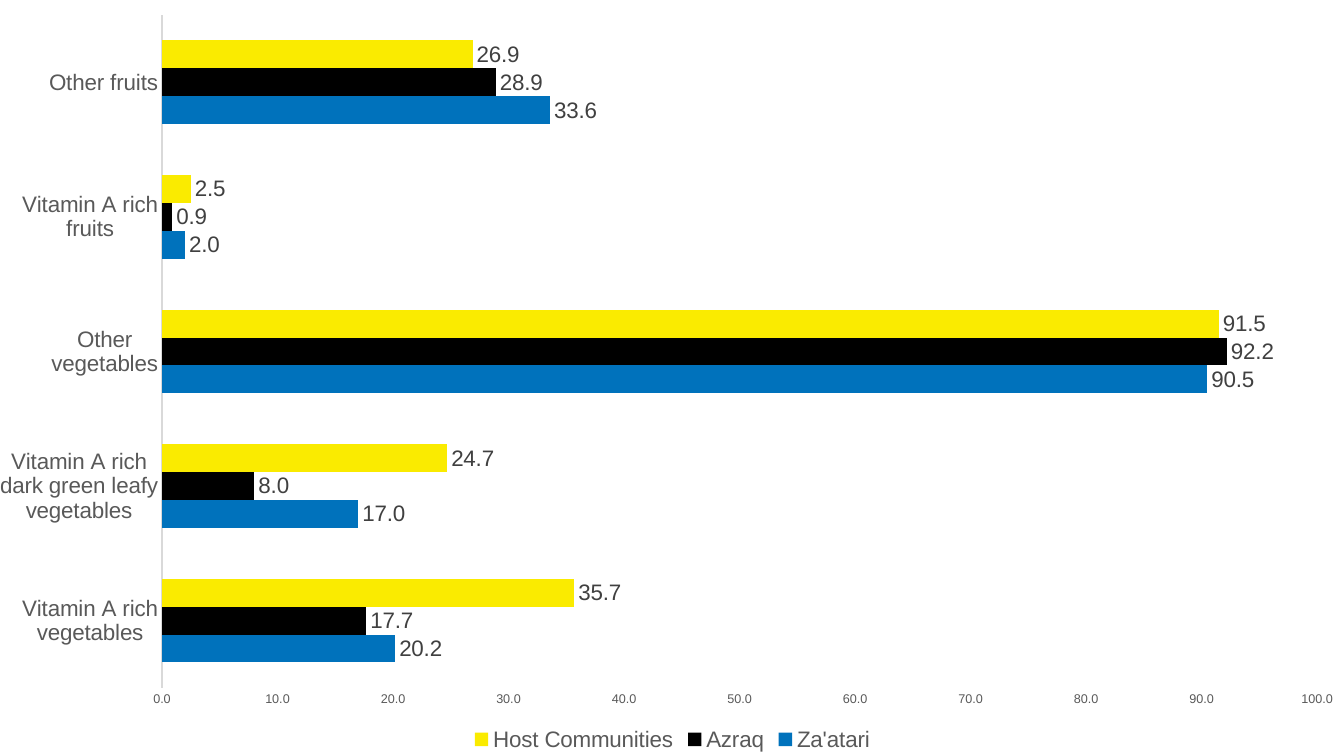
from lxml import etree
from pptx import Presentation
from pptx.chart.data import CategoryChartData
from pptx.dml.color import RGBColor
from pptx.enum.chart import (
    XL_CHART_TYPE, XL_LABEL_POSITION, XL_LEGEND_POSITION, XL_TICK_MARK)
from pptx.util import Pt

BAR_CLUSTERED = XL_CHART_TYPE.BAR_CLUSTERED
OUTSIDE_END = XL_LABEL_POSITION.OUTSIDE_END
BOTTOM = XL_LEGEND_POSITION.BOTTOM
NO_TICK = XL_TICK_MARK.NONE

CHART_NAMESPACE = "http://schemas.openxmlformats.org/drawingml/2006/chart"
SLIDE_WIDTH, SLIDE_HEIGHT = Pt(960), Pt(540)
NUMBER_FORMAT = "0.0"
GRAY = "595959"

FOOD_GROUPS = [
    "Vitamin A rich vegetables",
    "Vitamin A rich dark green leafy vegetables",
    "Other vegetables",
    "Vitamin A rich fruits",
    "Other fruits",
]
LOCATIONS = [
    ("Za'atari", "0072BC", (20.2, 17.0, 90.5, 2.0, 33.6)),
    ("Azraq", "000000", (17.7, 8.0, 92.2, 0.9, 28.9)),
    ("Host Communities", "FAEB00", (35.7, 24.7, 91.5, 2.5, 26.9)),
]


def color(hex_value):
    return RGBColor.from_string(hex_value)


def format_font(font, size=16, hex_color=GRAY, name="Arial"):
    font.size = Pt(size)
    font.name = name
    font.bold = False
    font.color.rgb = color(hex_color)


def add_bar_chart(slide):
    data = CategoryChartData(number_format=NUMBER_FORMAT)
    data.categories = FOOD_GROUPS
    for name, _, values in LOCATIONS:
        data.add_series(name, values)
    frame = slide.shapes.add_chart(
        BAR_CLUSTERED, 0, 0, SLIDE_WIDTH, SLIDE_HEIGHT, data)
    chart = frame.chart
    chart.has_title = False
    format_font(chart.font, size=10, hex_color="000000")
    return chart


def set_plot_area(chart, **fractions):
    """Fix the inner plot area as fractions (x, y, w, h) of the chart."""
    def add(parent, tag, value=None):
        child = etree.SubElement(parent, f"{{{CHART_NAMESPACE}}}{tag}")
        if value is not None:
            child.set("val", str(value))
        return child

    plot_area = chart.plots[0]._element.getparent()
    for old_layout in plot_area.findall(f"{{{CHART_NAMESPACE}}}layout"):
        plot_area.remove(old_layout)
    layout = add(plot_area, "layout")
    plot_area.insert(0, layout)
    manual = add(layout, "manualLayout")
    add(manual, "layoutTarget", "inner")
    for side in ("x", "y"):
        add(manual, f"{side}Mode", "edge")
    for side, fraction in fractions.items():
        add(manual, side, fraction)


def format_series(plot):
    plot.gap_width = 182
    plot.overlap = 0
    plot.vary_by_categories = False
    for series, (_, hex_color, _) in zip(plot.series, LOCATIONS):
        series.invert_if_negative = False
        series.format.fill.solid()
        series.format.fill.fore_color.rgb = color(hex_color)
        labels = series.data_labels
        labels.show_value = True
        labels.position = OUTSIDE_END
        labels.number_format = NUMBER_FORMAT
        labels.number_format_is_linked = False
        format_font(labels.font, hex_color="404040")


def format_axes(chart):
    for axis, size in ((chart.category_axis, 16), (chart.value_axis, 9)):
        axis.major_tick_mark = NO_TICK
        axis.minor_tick_mark = NO_TICK
        axis.has_major_gridlines = False
        format_font(axis.tick_labels.font, size=size)

    category_line = chart.category_axis.format.line
    category_line.color.rgb = color("D9D9D9")
    category_line.width = Pt(0.75)

    value_axis = chart.value_axis
    value_axis.format.line.fill.background()
    value_axis.minimum_scale = 0
    value_axis.maximum_scale = 100
    value_axis.major_unit = 10
    value_axis.tick_labels.number_format = NUMBER_FORMAT
    value_axis.tick_labels.number_format_is_linked = False


def add_legend(chart):
    chart.has_legend = True
    chart.legend.position = BOTTOM
    chart.legend.include_in_layout = False
    format_font(chart.legend.font)


def main():
    presentation = Presentation()
    presentation.slide_width = SLIDE_WIDTH
    presentation.slide_height = SLIDE_HEIGHT
    slide = presentation.slides.add_slide(presentation.slide_layouts[6])
    chart = add_bar_chart(slide)
    set_plot_area(chart, x=0.12, y=0.02, w=0.86, h=0.89)
    format_series(chart.plots[0])
    format_axes(chart)
    add_legend(chart)
    presentation.save("out.pptx")


if __name__ == "__main__":
    main()
